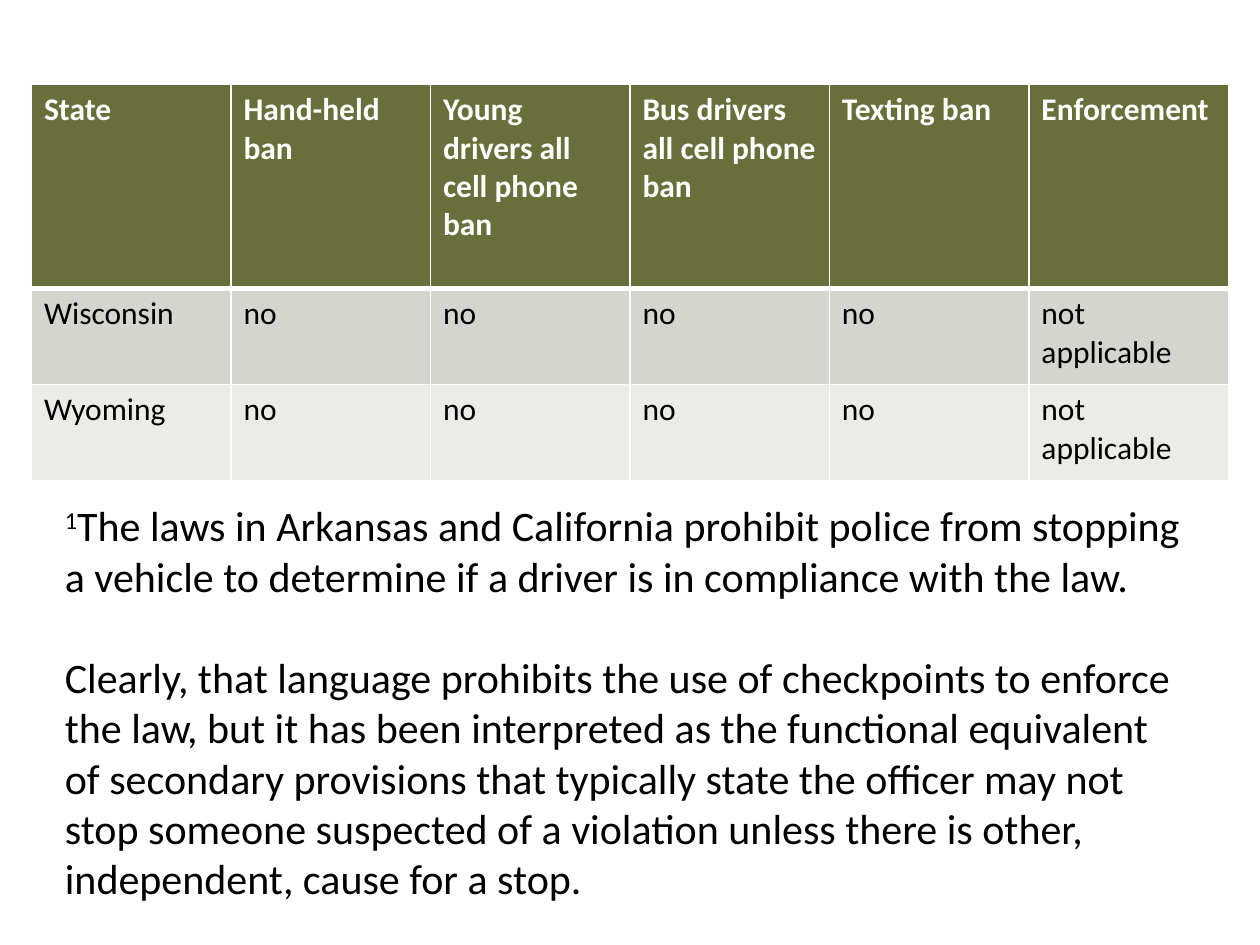
from dataclasses import dataclass

from lxml.etree import SubElement
from pptx import Presentation
from pptx.dml.color import RGBColor
from pptx.enum.text import MSO_AUTO_SIZE as AutoSize
from pptx.oxml.ns import qn
from pptx.slide import Slide
from pptx.table import _Cell as Cell
from pptx.text.text import _Run as Run
from pptx.util import Pt

FONT = "Calibri"
COLORS = {
    "olive": "686F3A",
    "gray": "D4D5CE",
    "pale": "EBEBE8",
    "white": "FFFFFF",
    "black": "000000",
}
COLUMN_WIDTH = 114


@dataclass
class BanRow:
    labels: list[str]
    height: float
    fill: str
    ink: str = "black"
    bold: bool = False
    top_line: float = 1
    bottom_line: float = 1


NO_BANS = ["no"] * 4 + ["not applicable"]
ROWS = [
    BanRow(
        ["State", "Hand-held ban", "Young drivers all cell phone ban",
         "Bus drivers all cell phone ban", "Texting ban", "Enforcement"],
        116.6, "olive", "white", bold=True, bottom_line=3,
    ),
    BanRow(["Wisconsin", *NO_BANS], 55, "gray", top_line=3),
    BanRow(["Wyoming", *NO_BANS], 55, "pale"),
]

FOOTNOTE = (
    "The laws in Arkansas and California prohibit police from stopping a vehicle "
    "to determine if a driver is in compliance with the law."
)
COMMENT = (
    "Clearly, that language prohibits the use of checkpoints to enforce the law, "
    "but it has been interpreted as the functional equivalent of secondary "
    "provisions that typically state the officer may not stop someone suspected "
    "of a violation unless there is other, independent, cause for a stop."
)


def rgb(name: str) -> RGBColor:
    return RGBColor.from_string(COLORS[name])


def format_run(span: Run, size: float, ink: str, bold: bool = False) -> None:
    span.font.name = FONT
    span.font.size = Pt(size)
    span.font.bold = bold
    span.font.color.rgb = rgb(ink)


def add_borders(cell: Cell, row: BanRow) -> None:
    """Add white cell borders; they must precede the fill in the XML."""
    properties = cell._tc.get_or_add_tcPr()
    widths = {"lnL": 1, "lnR": 1, "lnT": row.top_line, "lnB": row.bottom_line}
    for tag, width in widths.items():
        line = SubElement(properties, qn(f"a:{tag}"), w=str(Pt(width)))
        fill = SubElement(line, qn("a:solidFill"))
        SubElement(fill, qn("a:srgbClr"), val=COLORS["white"])


def draw_ban_table(page: Slide, rows: list[BanRow]) -> None:
    columns = len(rows[0].labels)
    table = page.shapes.add_table(
        len(rows), columns, Pt(18), Pt(48.2),
        Pt(COLUMN_WIDTH * columns), Pt(sum(row.height for row in rows)),
    ).table
    for column in table.columns:
        column.width = Pt(COLUMN_WIDTH)
    for table_row, row in zip(table.rows, rows):
        table_row.height = Pt(row.height)
        for cell, label in zip(table_row.cells, row.labels):
            add_borders(cell, row)
            cell.fill.solid()
            cell.fill.fore_color.rgb = rgb(row.fill)
            cell.text_frame.text = label
            format_run(cell.text_frame.paragraphs[0].runs[0], 18, row.ink, row.bold)


def draw_notes_on_law(page: Slide) -> None:
    box = page.shapes.add_textbox(Pt(30), Pt(282), Pt(654), Pt(240))
    frame = box.text_frame
    frame.word_wrap = True
    frame.auto_size = AutoSize.SHAPE_TO_FIT_TEXT

    frame.text = "1"
    footnote = frame.paragraphs[0]
    footnote.runs[0].font._element.set("baseline", "30000")
    footnote.add_run().text = FOOTNOTE

    comment = frame.add_paragraph()
    comment.text = COMMENT
    comment.space_before = Pt(29)

    for para in frame.paragraphs:
        for span in para.runs:
            format_run(span, 24, "black")


def main() -> None:
    deck = Presentation()
    deck.slide_width, deck.slide_height = Pt(720), Pt(540)
    page = deck.slides.add_slide(deck.slide_layouts[6])
    draw_ban_table(page, ROWS)
    draw_notes_on_law(page)
    deck.save("out.pptx")


if __name__ == "__main__":
    main()
